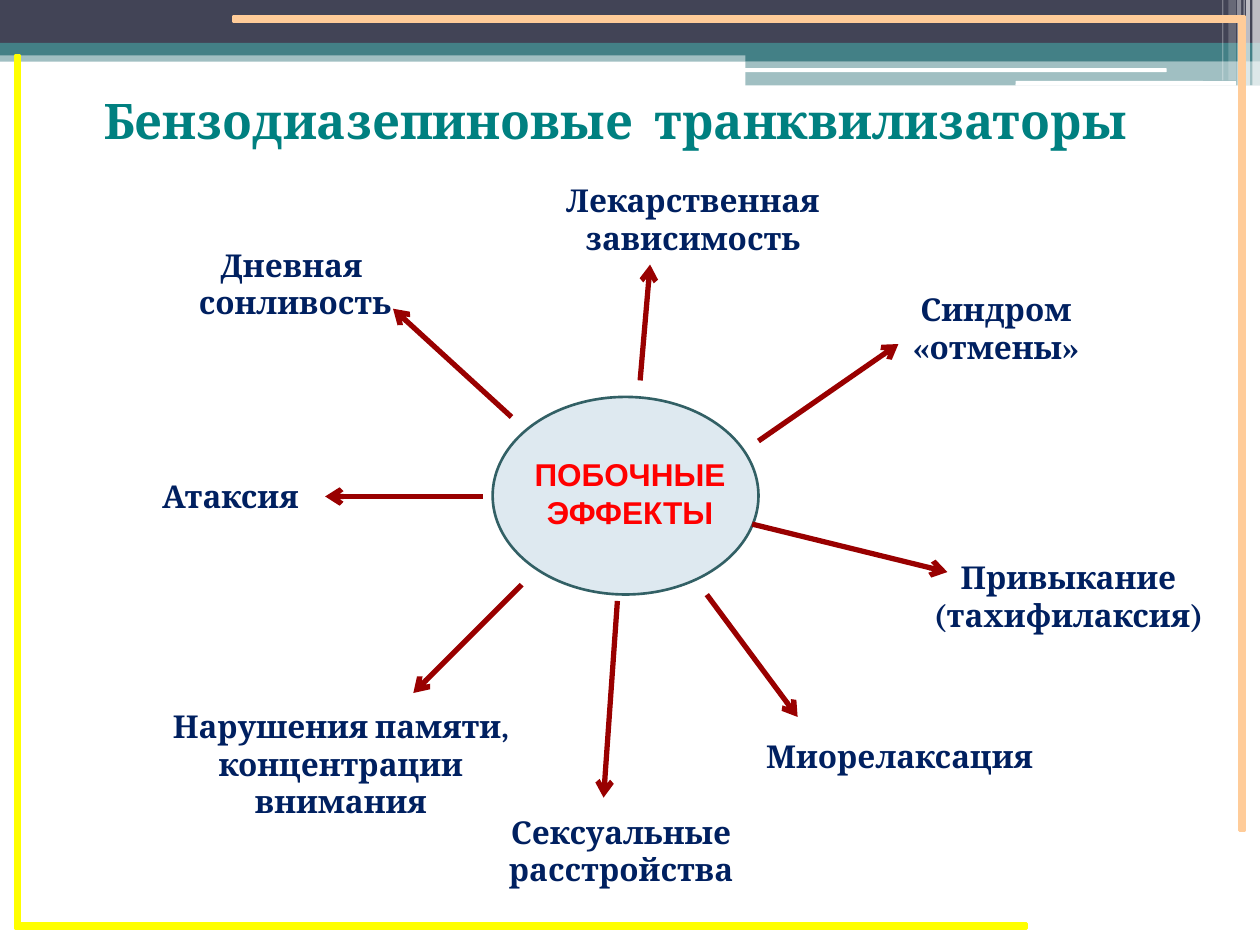
from dataclasses import dataclass

from lxml import etree
from pptx import Presentation
from pptx.dml.color import RGBColor
from pptx.enum.shapes import MSO_CONNECTOR, MSO_SHAPE
from pptx.enum.text import MSO_ANCHOR, MSO_AUTO_SIZE, PP_ALIGN
from pptx.oxml.ns import qn
from pptx.util import Pt

RECTANGLE, ROUNDED, OVAL = MSO_SHAPE.RECTANGLE, MSO_SHAPE.ROUNDED_RECTANGLE, MSO_SHAPE.OVAL
STRAIGHT = MSO_CONNECTOR.STRAIGHT
CENTER, TOP, GROW = PP_ALIGN.CENTER, MSO_ANCHOR.TOP, MSO_AUTO_SIZE.SHAPE_TO_FIT_TEXT
TITLE_ONLY = 5


@dataclass(frozen=True)
class Theme:
    dark: str = "424456"
    teal: str = "438086"
    white: str = "FFFFFF"
    yellow: str = "FFFF00"
    peach: str = "FFCC99"
    title: str = "008080"
    label: str = "002060"
    hub_fill: str = "DEE9F0"
    hub_line: str = "326065"
    hub_text: str = "FF0000"
    arrow: str = "990000"
    serif: str = "Cambria"
    sans: str = "Arial"
    title_size: float = 28
    label_size: float = 18
    outline: float = 1.5
    arrow_width: float = 3


@dataclass(frozen=True)
class Box:
    left: float
    top: float
    width: float
    height: float

    def lengths(self) -> tuple:
        return Pt(self.left), Pt(self.top), Pt(self.width), Pt(self.height)


@dataclass(frozen=True)
class Bar:
    box: Box
    color: str
    opacity: int = 100
    kind: int = RECTANGLE
    outline: str = ""


@dataclass(frozen=True)
class Effect:
    """A side effect: its label and the arrow that leads to it."""
    text: str
    box: Box
    start: tuple
    end: tuple


THEME = Theme()
ONE_LINE, TWO_LINES = 28.8, 51.1

BANNER = [
    Bar(Box(0, 28.8, 720, 6.5), THEME.teal, 50),
    Bar(Box(0, 0, 720, 24.5), THEME.dark),
    Bar(Box(0, 24.5, 720, 7.2), THEME.teal),
    Bar(Box(426, 28, 294, 7), THEME.teal),
    Bar(Box(426, 34.8, 294, 14), THEME.teal, 50),
    Bar(Box(425.5, 39, 241.2, 2.2), THEME.white, kind=ROUNDED),
    Bar(Box(580.3, 46.3, 126, 2.7), THEME.white, kind=ROUNDED),
]
# left, width, height, opacity
STRIPES = [
    (715.7, 4.3, 49, 65), (712.1, 2.2, 49, 65), (710.6, 0.7, 49, 60),
    (707, 2.2, 49, 40), (702, 4.3, 46, 20), (698.4, 0.7, 46, 30),
]
FRAME = [
    (Box(8.6, 31.7, 2.9, 496.1), THEME.yellow),
    (Box(8.6, 527.8, 578.2, 2.9), THEME.yellow),
    (Box(708.5, 9.4, 2.9, 465.1), THEME.peach),
    (Box(133.2, 9.4, 575.3, 2.9), THEME.peach),
]
EFFECTS = [
    Effect("Дневная\n сонливость", Box(87.8, 136.8, 157.7, TWO_LINES), (292.3, 238.3), (224.6, 176.4)),
    Effect("Атаксия", Box(44.6, 269.3, 174.2, ONE_LINE), (275.8, 283.7), (185.8, 283.7)),
    Effect("Нарушения памяти, концентрации внимания", Box(74.9, 400.3, 239.8, TWO_LINES),
           (298.1, 334.1), (236.2, 396)),
    Effect("Лекарственная зависимость", Box(308.9, 100.1, 174.2, TWO_LINES), (365.8, 217.4), (371.5, 151.2)),
    Effect("Синдром «отмены»", Box(496.1, 162, 146.2, TWO_LINES), (433.4, 252), (513.4, 196.6)),
    Effect("Миорелаксация", Box(427.7, 417.6, 172.8, ONE_LINE), (403.9, 339.8), (455.8, 409.7)),
    Effect("Привыкание (тахифилаксия)", Box(524.2, 315.4, 172.8, TWO_LINES), (429.8, 299.5), (541.4, 326.9)),
    Effect("Сексуальные расстройства", Box(268.6, 460.8, 172.8, TWO_LINES), (352.8, 343.4), (344.9, 455.8)),
]


def rgb(color: str) -> RGBColor:
    return RGBColor.from_string(color)


def write(shape, text: str, *, font: str, size: float, color: str) -> None:
    frame = shape.text_frame
    frame.word_wrap = True
    frame.auto_size = GROW
    frame.vertical_anchor = TOP
    for index, line in enumerate(text.split("\n")):
        para = frame.add_paragraph() if index else frame.paragraphs[0]
        para.alignment = CENTER
        span = para.add_run()
        span.text = line
        span.font.name = font
        span.font.size = Pt(size)
        span.font.bold = True
        span.font.color.rgb = rgb(color)


def add_text(page, text: str, box: Box, **style) -> None:
    write(page.shapes.add_textbox(*box.lengths()), text, **style)


def add_bar(page, bar: Bar) -> None:
    shape = page.shapes.add_shape(bar.kind, *bar.box.lengths())
    shape.shadow.inherit = False
    shape.fill.solid()
    shape.fill.fore_color.rgb = rgb(bar.color)
    if bar.opacity < 100:
        color = shape.fill._xPr.find(qn("a:solidFill"))[0]
        etree.SubElement(color, qn("a:alpha"), val=str(bar.opacity * 1000))
    if bar.outline:
        shape.line.color.rgb = rgb(bar.outline)
        shape.line.width = Pt(THEME.outline)
    else:
        shape.line.fill.background()


def add_arrow(page, start: tuple, end: tuple) -> None:
    arrow = page.shapes.add_connector(STRAIGHT, *(Pt(value) for value in start + end))
    arrow.line.color.rgb = rgb(THEME.arrow)
    arrow.line.width = Pt(THEME.arrow_width)
    etree.SubElement(arrow.line._get_or_add_ln(), qn("a:tailEnd"), type="arrow")
    etree.SubElement(arrow._element.spPr, qn("a:effectLst"))


def add_title(page, text: str, box: Box) -> None:
    title = page.shapes.title
    title.left, title.top, title.width, title.height = box.lengths()
    write(title, text, font=THEME.serif, size=THEME.title_size, color=THEME.title)


def main() -> None:
    deck = Presentation()
    deck.slide_width, deck.slide_height = Pt(720), Pt(540)
    page = deck.slides.add_slide(deck.slide_layouts[TITLE_ONLY])

    for bar in BANNER:
        add_bar(page, bar)
    for left, width, height, opacity in STRIPES:
        add_bar(page, Bar(Box(left, 0, width, height), THEME.white, opacity))
    for box, color in FRAME:
        add_bar(page, Bar(box, color, outline=color))

    add_title(page, "Бензодиазепиновые  транквилизаторы", Box(-8.6, 48.2, 720, 41))
    add_bar(page, Bar(Box(281.5, 226.8, 151.9, 112.9), THEME.hub_fill, kind=OVAL, outline=THEME.hub_line))
    add_text(page, "ПОБОЧНЫЕ ЭФФЕКТЫ", Box(292.3, 256.3, 135.4, TWO_LINES),
             font=THEME.sans, size=THEME.label_size, color=THEME.hub_text)
    for effect in EFFECTS:
        add_text(page, effect.text, effect.box,
                 font=THEME.serif, size=THEME.label_size, color=THEME.label)
        add_arrow(page, effect.start, effect.end)

    deck.save("out.pptx")


if __name__ == "__main__":
    main()
